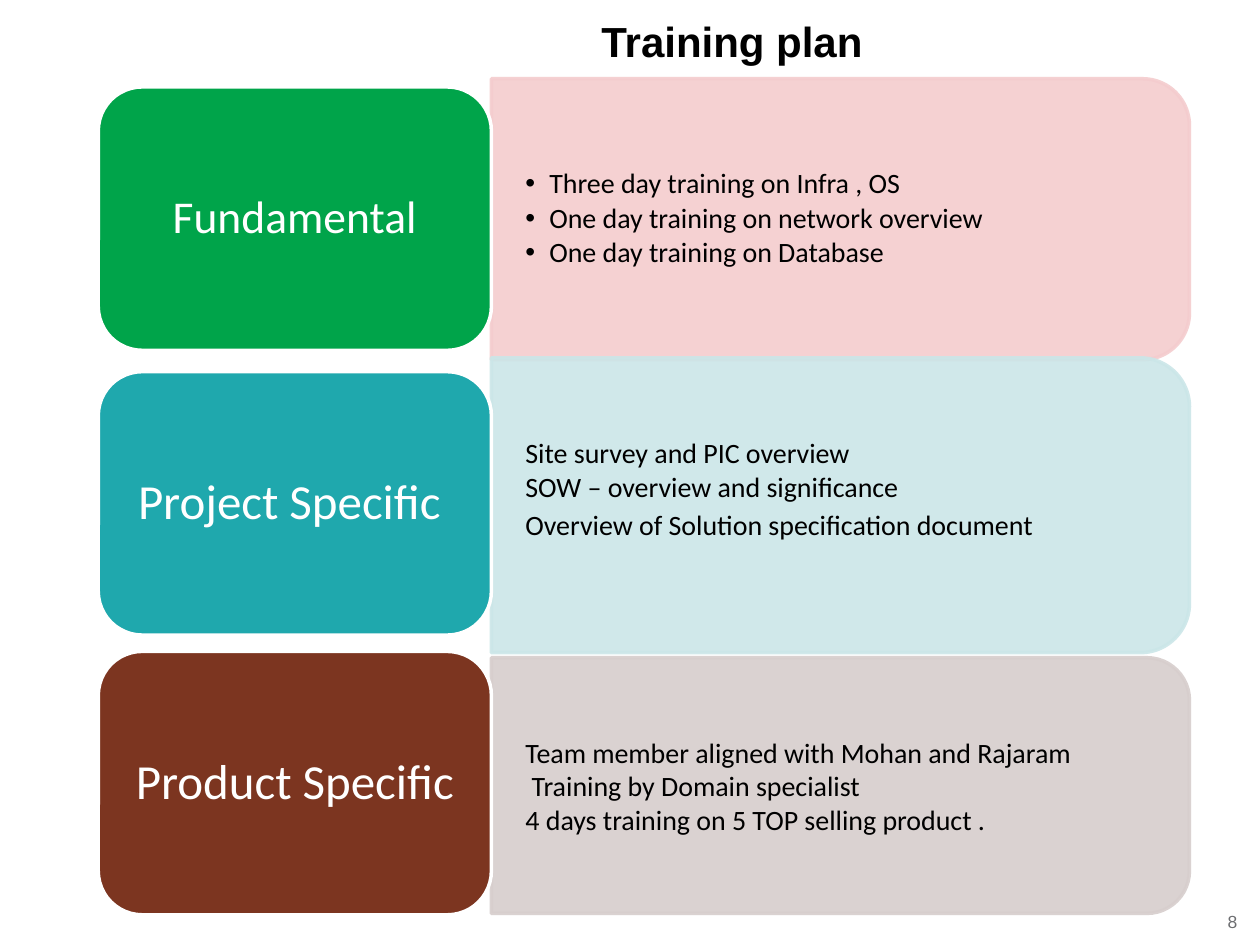
from dataclasses import dataclass

from lxml import etree
from pptx import Presentation
from pptx.dml.color import RGBColor
from pptx.enum.shapes import MSO_SHAPE
from pptx.enum.text import MSO_ANCHOR, MSO_AUTO_SIZE, PP_ALIGN
from pptx.oxml.ns import qn
from pptx.shapes.autoshape import Shape
from pptx.slide import Slide
from pptx.text.text import TextFrame
from pptx.util import Emu, Inches, Pt

ROUNDED = MSO_SHAPE.ROUNDED_RECTANGLE
ROUNDED_TOP = MSO_SHAPE.ROUND_2_SAME_RECTANGLE
MIDDLE = MSO_ANCHOR.MIDDLE
NO_AUTOFIT = MSO_AUTO_SIZE.NONE
LEFT, CENTER, RIGHT = PP_ALIGN.LEFT, PP_ALIGN.CENTER, PP_ALIGN.RIGHT

SLIDE_WIDTH, SLIDE_HEIGHT = Inches(10), Inches(7.5)
COLUMNS, ROWS = 100, 75
COMPARISON_LAYOUT = 3 + 1


@dataclass(frozen=True)
class Theme:
    heading_font: str = "Arial"
    body_font: str = "Calibri"
    black: str = "000000"
    white: str = "FFFFFF"
    grey: str = "6D6E71"
    title_size: int = 24
    list_size: int = 16
    number_size: int = 10
    outline: int = 2
    panel_opacity: int = 90


@dataclass(frozen=True)
class Area:
    column: float
    row: float
    columns: float
    rows: float


@dataclass(frozen=True)
class Stage:
    name: str
    name_size: int
    name_row: float
    color: str
    panel_color: str
    panel_row: float
    panel_rows: float
    topics: tuple[str, ...]
    list_slot: int
    spacings: tuple[float, ...]
    gap: float = 0
    bullet: str = ""
    room_below: float = 0


THEME = Theme()
NAME_COLUMN, NAME_COLUMNS, NAME_ROWS = 7.8, 31.2, 20.9
PANEL_COLUMN, PANEL_COLUMNS = 39, 55.4
LIST_INSETS = (2.7, 1.4)
NAME_INSETS = (1.1, 0.5)
HANGING = 1.9

STAGES = (
    Stage("Fundamental", 26, 6.9, "00A44A", "F4CCCE", 6.25, 22.3,
          ("Three day training on Infra , OS",
           "One day training on network overview",
           "One day training on Database"),
          2, (0.9, 0.9, 0.9), gap=2.4, bullet="•"),
    Stage("Project Specific ", 28, 29.5, "1FA8AD", "CBE6E8", 28.4, 23.4,
          ("Site survey and PIC overview",
           "SOW – overview and significance",
           "Overview of Solution specification document"),
          4, (0.9, 0.9, 1), gap=2.4, room_below=2.4),
    Stage("Product Specific", 28, 51.7, "7C3520", "D7CECD", 52.2, 20.3,
          ("Team member aligned with Mohan and Rajaram",
           " Training by Domain specialist",
           "4 days training on 5 TOP selling product ."),
          1, (1, 1, 1)),
)


def across(columns: float) -> Emu:
    return Emu(round(SLIDE_WIDTH * columns / COLUMNS))


def down(rows: float) -> Emu:
    return Emu(round(SLIDE_HEIGHT * rows / ROWS))


def place(item: Shape, area: Area) -> None:
    item.left, item.top = across(area.column), down(area.row)
    item.width, item.height = across(area.columns), down(area.rows)


def write(frame: TextFrame, *lines: str, size: float, color: str, font: str,
          align: PP_ALIGN = LEFT, bold: bool = False,
          insets: tuple[float, float] = (0, 0), room_below: float = 0,
          spacings: tuple[float, ...] = (1,), gap: float = 0) -> None:
    frame.auto_size = NO_AUTOFIT
    frame.word_wrap = True
    frame.vertical_anchor = MIDDLE
    frame.margin_left = frame.margin_right = across(insets[0])
    frame.margin_top = down(insets[1])
    frame.margin_bottom = down(insets[1] + room_below)
    for index, (line, spacing) in enumerate(zip(lines, spacings, strict=True)):
        paragraph = frame.paragraphs[0] if index == 0 else frame.add_paragraph()
        paragraph.alignment = align
        paragraph.line_spacing = spacing
        paragraph.space_before, paragraph.space_after = Pt(0), Pt(gap)
        run = paragraph.add_run()
        run.text = line
        run.font.name, run.font.size, run.font.bold = font, Pt(size), bold
        run.font.color.rgb = RGBColor.from_string(color)


def hang_lines(frame: TextFrame, bullet: str) -> None:
    for paragraph in frame.paragraphs:
        properties = paragraph._p.get_or_add_pPr()
        properties.set("marL", str(across(HANGING)))
        properties.set("indent", str(-across(HANGING)))
        if bullet:
            etree.SubElement(properties, qn("a:buFont"), typeface=THEME.heading_font)
            etree.SubElement(properties, qn("a:buChar"), char=bullet)
        else:
            etree.SubElement(properties, qn("a:buNone"))


def draw_block(slide: Slide, preset: MSO_SHAPE, area: Area, fill: str, line: str) -> Shape:
    block = slide.shapes.add_shape(preset, 0, 0, 0, 0)
    place(block, area)
    block.shadow.inherit = False
    block.fill.solid()
    block.fill.fore_color.rgb = RGBColor.from_string(fill)
    block.line.color.rgb = RGBColor.from_string(line)
    block.line.width = Pt(THEME.outline)
    return block


def draw_panel(slide: Slide, stage: Stage) -> None:
    upright = Area(PANEL_COLUMN + (PANEL_COLUMNS - stage.panel_rows) / 2,
                   stage.panel_row + (stage.panel_rows - PANEL_COLUMNS) / 2,
                   stage.panel_rows, PANEL_COLUMNS)
    panel = draw_block(slide, ROUNDED_TOP, upright, stage.panel_color, stage.panel_color)
    panel.rotation = 90
    for tint in panel._element.spPr.iter(qn("a:srgbClr")):
        etree.SubElement(tint, qn("a:alpha"), val=str(THEME.panel_opacity * 1000))


def draw_stage(slide: Slide, stage: Stage) -> None:
    draw_panel(slide, stage)
    topics = slide.placeholders[stage.list_slot]
    place(topics, Area(PANEL_COLUMN, stage.panel_row, PANEL_COLUMNS - 1, stage.panel_rows))
    write(topics.text_frame, *stage.topics, size=THEME.list_size, color=THEME.black,
          font=THEME.body_font, insets=LIST_INSETS, room_below=stage.room_below,
          spacings=stage.spacings, gap=stage.gap)
    hang_lines(topics.text_frame, stage.bullet)
    slide.shapes._spTree.append(topics._element)
    name = draw_block(slide, ROUNDED,
                      Area(NAME_COLUMN, stage.name_row, NAME_COLUMNS, NAME_ROWS),
                      stage.color, THEME.white)
    write(name.text_frame, stage.name, size=stage.name_size, color=THEME.white,
          font=THEME.body_font, align=CENTER, insets=NAME_INSETS, spacings=(0.9,))


def main() -> None:
    deck = Presentation()
    deck.slide_width, deck.slide_height = SLIDE_WIDTH, SLIDE_HEIGHT
    slide = deck.slides.add_slide(deck.slide_layouts[COMPARISON_LAYOUT])

    heading = slide.shapes.title
    place(heading, Area(20.9, 1.2, 74.4, 4))
    write(heading.text_frame, " Training plan ", size=THEME.title_size, color=THEME.black,
          font=THEME.heading_font, align=CENTER, bold=True)

    for stage in STAGES:
        draw_stage(slide, stage)

    spare = slide.placeholders[3]._element
    spare.getparent().remove(spare)

    page_number = slide.shapes.add_textbox(0, 0, 0, 0)
    place(page_number, Area(96.5, 72.3, 1.7, 1.7))
    write(page_number.text_frame, "8", size=THEME.number_size, color=THEME.grey,
          font=THEME.heading_font, align=RIGHT)

    deck.save("out.pptx")


if __name__ == "__main__":
    main()
